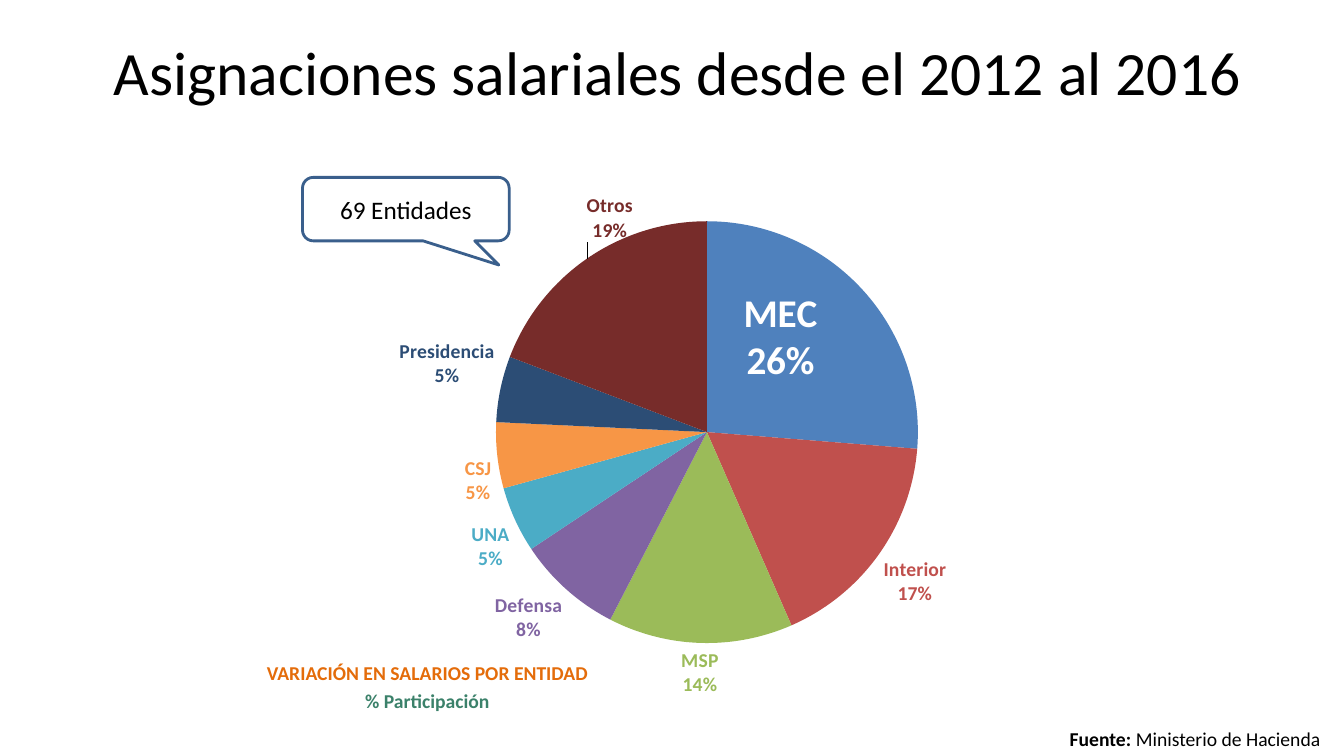
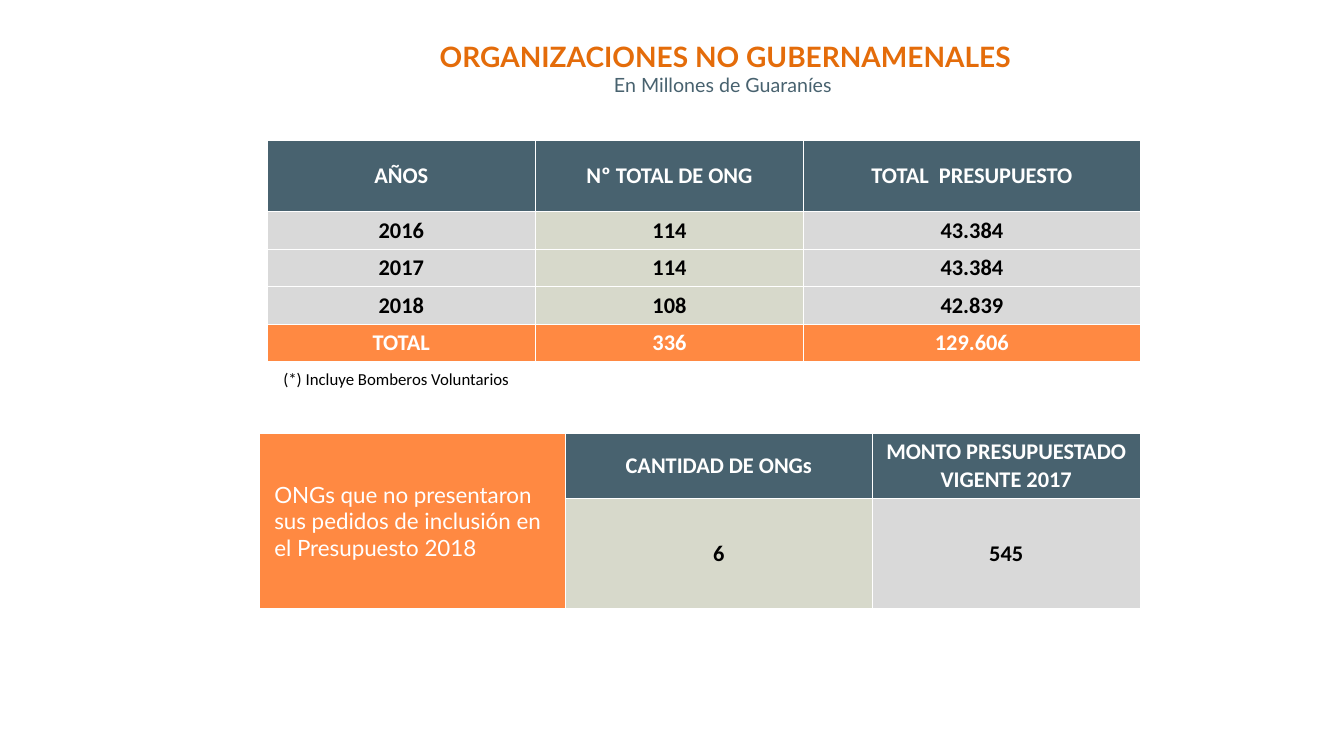
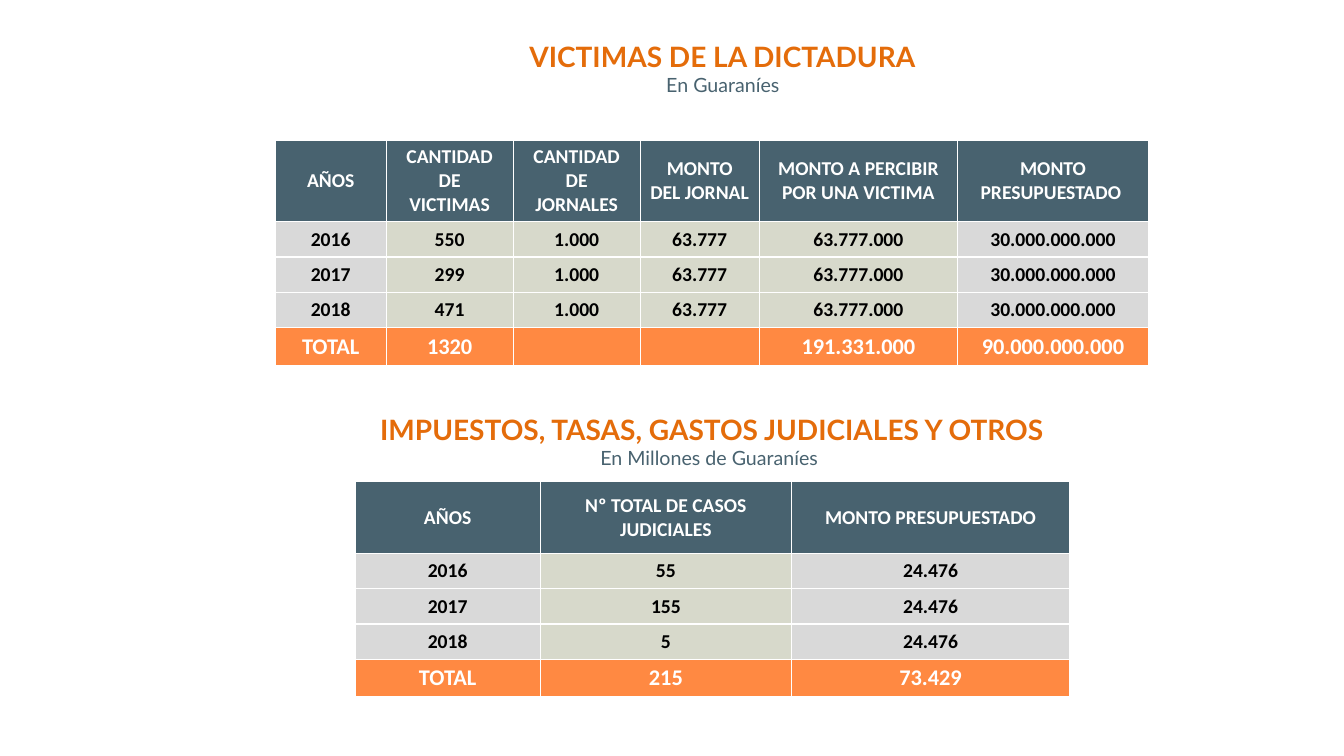
from lxml import etree
from pptx import Presentation
from pptx.chart.data import CategoryChartData
from pptx.dml.color import RGBColor
from pptx.enum.chart import XL_CHART_TYPE as ChartType, XL_LABEL_POSITION as LabelPosition
from pptx.enum.shapes import MSO_SHAPE as Shape
from pptx.enum.text import MSO_ANCHOR as Anchor, PP_ALIGN as Align
from pptx.oxml import parse_xml
from pptx.oxml.ns import nsdecls, qn
from pptx.util import Inches, Pt

# Shared look
ORANGE, SLATE, TOTAL_FILL = "E46C0A", "48626F", "FF8942"
GRAY, SAGE, WHITE, BLACK = "D9D9D9", "D7D9CB", "FFFFFF", "000000"
HEADING = dict(size=20, name="Lato", color=ORANGE, bold=True)
SUBHEADING = dict(size=14, name="Lato", color=SLATE, bold=False)
HEADING_BOX = (1.42, 0.36, 11.55, 0.63)

# Slide 1: category, share, slice colour
SHARES = [
    ("MEC", 0.26, "4F81BD"), ("Interior", 0.17, "C0504D"),
    ("MSP", 0.14, "9BBB59"), ("Defensa", 0.08, "8064A2"),
    ("UNA", 0.05, "4BACC6"), ("CSJ", 0.05, "F79646"),
    ("Presidencia", 0.05, "2C4D75"), ("Otros", 0.19, "772C2A"),
]
PIE_AREA = dict(x=0.27, y=0.13, w=0.516, h=0.75)
LABEL_SHIFTS = {"MEC": dict(x=-0.005, y=-0.04), "Otros": dict(x=0.06, y=-0.02)}

# Slides 2 and 3: tables
NGO_ROWS = [
    ("AÑOS", "Nº TOTAL DE ONG", "TOTAL  PRESUPUESTO"),
    ("2016", "114", "43.384"),
    ("2017", "114", "43.384"),
    ("2018", "108", "42.839"),
    ("TOTAL", "336", "129.606"),
    ("(*) Incluye Bomberos Voluntarios", "", ""),
]
MISSING_ROWS = [
    ("ONGs que no presentaron sus pedidos de inclusión en el Presupuesto 2018",
     "CANTIDAD DE ONGs", "MONTO PRESUPUESTADO VIGENTE 2017"),
    ("", "6", "545"),
]
VICTIM_ROWS = [
    ("AÑOS", "CANTIDAD DE VICTIMAS", "CANTIDAD DE JORNALES", "MONTO DEL JORNAL",
     "MONTO A PERCIBIR POR UNA VICTIMA", "MONTO PRESUPUESTADO "),
    ("2016", "550", "1.000", "63.777", "63.777.000", "30.000.000.000"),
    ("2017", "299", "1.000", "63.777", "63.777.000", "30.000.000.000"),
    ("2018", "471", "1.000", "63.777", "63.777.000", "30.000.000.000"),
    ("TOTAL", "1320", "", "", "191.331.000", "90.000.000.000"),
]
COURT_ROWS = [
    ("AÑOS", "Nº TOTAL DE CASOS JUDICIALES", "MONTO PRESUPUESTADO"),
    ("2016", "55", "24.476"),
    ("2017", "155", "24.476"),
    ("2018", "5", "24.476"),
    ("TOTAL", "215", "73.429"),
]


def rgb(color):
    return RGBColor.from_string(color)


def set_font(font, size=14, name="Calibri", color=BLACK, bold=False):
    for key, value in dict(size=Pt(size), name=name, bold=bold).items():
        setattr(font, key, value)
    font.color.rgb = rgb(color)


def add_run(paragraph, text, **look):
    run = paragraph.add_run()
    run.text = text
    set_font(run.font, **look)


def place(shape, box):
    for key, value in zip(("left", "top", "width", "height"), box):
        setattr(shape, key, Inches(value))


def add_text_box(slide, box, anchor=Anchor.MIDDLE):
    shape = slide.shapes.add_textbox(*map(Inches, box))
    shape.text_frame.word_wrap = True
    shape.text_frame.vertical_anchor = anchor
    return shape


def write_heading(shape, heading, subheading):
    shape.text_frame.vertical_anchor = Anchor.MIDDLE
    paragraph = shape.text_frame.paragraphs[0]
    paragraph.alignment = Align.CENTER
    add_run(paragraph, heading, **HEADING)
    paragraph.add_line_break()
    add_run(paragraph, subheading, **SUBHEADING)


def new_slide(presentation, box):
    slide = presentation.slides.add_slide(presentation.slide_layouts[5])
    place(slide.shapes.title, box)
    return slide


# Tables
def format_cell(cell, text, fill=None, align=Align.CENTER, margins=(0.1, 0.05), **look):
    properties = cell._tc.get_or_add_tcPr()
    for side in "LRTB":
        properties.append(parse_xml(
            f'<a:ln{side} {nsdecls("a")} w="{Pt(1)}"><a:solidFill>'
            f'<a:srgbClr val="{WHITE}"/></a:solidFill></a:ln{side}>'))
    if fill:
        cell.fill.solid()
        cell.fill.fore_color.rgb = rgb(fill)
    else:
        cell.fill.background()
    cell.vertical_anchor = Anchor.MIDDLE
    cell.margin_left = cell.margin_right = Inches(margins[0])
    cell.margin_top = cell.margin_bottom = Inches(margins[1])
    paragraph = cell.text_frame.paragraphs[0]
    paragraph.alignment = align
    if text:
        add_run(paragraph, text, **look)
    else:
        paragraph._p.get_or_add_endParaRPr().set("sz", str(look["size"] * 100))


def add_table(slide, left, top, widths, heights, rows, size, margin=0.1):
    frame = slide.shapes.add_table(
        len(rows), len(widths), Inches(left), Inches(top),
        Inches(sum(widths)), Inches(sum(heights)))
    table = frame.table
    table.first_row = table.horz_banding = False
    for column, width in zip(table.columns, widths):
        column.width = Inches(width)
    for row, height in zip(table.rows, heights):
        row.height = Inches(height)
    last = len(widths) - 1
    for r, texts in enumerate(rows):
        for c, text in enumerate(texts):
            look = dict(size=size, color=WHITE, bold=True, margins=(margin, 0.05))
            if r == 0:
                look.update(fill=SLATE)
            elif texts[0] == "TOTAL":
                look.update(fill=TOTAL_FILL, size=16)
            elif texts[0].startswith("(*)"):
                look.update(size=12, color=BLACK, bold=False, align=Align.LEFT)
            else:
                look.update(fill=GRAY if c in (0, last) else SAGE, color=BLACK)
            if rows is MISSING_ROWS and c == 0:
                look.update(fill=TOTAL_FILL, name="Lato", color=WHITE, bold=False,
                            align=Align.LEFT, margins=(0.15, 0.15))
            format_cell(table.cell(r, c), text, **look)
    return table


# Pie chart
def manual_layout(values, inner=False):
    target = '<c:layoutTarget val="inner"/>' if inner else ""
    modes = '<c:xMode val="edge"/><c:yMode val="edge"/>' if inner else ""
    sizes = "".join(f'<c:{key} val="{value}"/>' for key, value in values.items())
    return parse_xml(f'<c:layout {nsdecls("c")}><c:manualLayout>{target}{modes}{sizes}'
                     '</c:manualLayout></c:layout>')


def add_pie(slide, box):
    data = CategoryChartData(number_format="0%")
    data.categories = [name for name, _, _ in SHARES]
    data.add_series("Series 1", [share for _, share, _ in SHARES])
    chart = slide.shapes.add_chart(ChartType.PIE, *map(Inches, box), data).chart
    chart.has_legend = chart.has_title = False
    set_font(chart.font, size=10)
    plot = chart.plots[0]
    plot.vary_by_categories = True
    area = chart._chartSpace.chart.plotArea
    for layout in area.findall(qn("c:layout")):
        area.remove(layout)
    area.insert(0, manual_layout(PIE_AREA, inner=True))

    for index, (name, _, color) in enumerate(SHARES):
        point = plot.series[0].points[index]
        point.format.fill.solid()
        point.format.fill.fore_color.rgb = rgb(color)
        label, inside = point.data_label, name == "MEC"
        set_font(label.font, size=28 if inside else 14,
                 color=WHITE if inside else color, bold=True)
        label.position = LabelPosition.CENTER if inside else LabelPosition.OUTSIDE_END
        element = label._get_or_add_dLbl()
        element.find(qn("c:showCatName")).set("val", "1")
        etree.SubElement(element, qn("c:separator")).text = "\n"
        if name in LABEL_SHIFTS:
            element.insert(1, manual_layout(LABEL_SHIFTS[name]))


def build_salaries(presentation):
    slide = new_slide(presentation, (0.41, 0.15, 12.63, 1.19))
    title = slide.shapes.title.text_frame
    title.vertical_anchor = Anchor.MIDDLE
    title.paragraphs[0].alignment = Align.CENTER
    title.paragraphs[0].line_spacing = 0.9
    add_run(title.paragraphs[0], "Asignaciones salariales desde el 2012 al 2016", size=44)

    # Chart caption
    caption = add_text_box(slide, (2.52, 6.44, 3.44, 0.69)).text_frame
    first, second = caption.paragraphs[0], caption.add_paragraph()
    first.space_before = Pt(6)
    for paragraph, text, color in (
            (first, "VARIACIÓN EN SALARIOS POR ENTIDAD", ORANGE),
            (second, "% Participación", "3B816A")):
        paragraph.alignment = Align.CENTER
        paragraph.line_spacing = Pt(20)
        add_run(paragraph, text, color=color, bold=True)

    add_pie(slide, (2.73, 1.47, 8.11, 5.58))

    # Callout for the "Otros" slice
    callout = slide.shapes.add_shape(
        Shape.ROUNDED_RECTANGULAR_CALLOUT, *map(Inches, (3, 1.76, 2.05, 0.63)))
    for index, value in enumerate((0.45, 0.88, 0.17)):
        callout.adjustments[index] = value
    callout.shadow.inherit = False
    callout.fill.background()
    callout.line.color.rgb = rgb("3A5F8C")
    callout.line.width = Pt(2)
    callout.text_frame.vertical_anchor = Anchor.MIDDLE
    paragraph = callout.text_frame.paragraphs[0]
    paragraph.alignment = Align.CENTER
    add_run(paragraph, "69 Entidades", size=18)

    # Source line
    source = add_text_box(slide, (10.51, 7.16, 2.82, 0.34), Anchor.TOP)
    paragraph = source.text_frame.paragraphs[0]
    add_run(paragraph, "Fuente: ", bold=True)
    add_run(paragraph, "Ministerio de Hacienda")


def build_ngos(presentation):
    slide = new_slide(presentation, HEADING_BOX)
    write_heading(slide.shapes.title, "ORGANIZACIONES NO GUBERNAMENALES",
                  "En Millones de Guaraníes ")
    table = add_table(slide, 2.65, 1.39, (2.66, 2.66, 3.34), [0.71] + [0.35] * 5,
                      NGO_ROWS, 16, margin=0.16)
    table.cell(5, 0).merge(table.cell(5, 1))
    table = add_table(slide, 2.57, 4.3, (3.04, 3.04, 2.66), (0.64, 1.09),
                      MISSING_ROWS, 16)
    table.cell(0, 0).merge(table.cell(1, 0))


def build_victims(presentation):
    slide = new_slide(presentation, HEADING_BOX)
    write_heading(slide.shapes.title, "VICTIMAS DE LA DICTADURA ", "En Guaraníes ")
    heights = [0.71] + [0.35] * 4
    add_table(slide, 2.73, 1.39, (1.1, 1.26, 1.26, 1.18, 1.97, 1.89), heights,
              VICTIM_ROWS, 14)
    add_table(slide, 3.52, 4.78, (1.84, 2.49, 2.76), heights, COURT_ROWS, 14)
    write_heading(add_text_box(slide, (2.73, 4.06, 8.66, 0.63)),
                  "IMPUESTOS, TASAS, GASTOS JUDICIALES Y OTROS",
                  "En Millones de Guaraníes ")


def main():
    presentation = Presentation()
    presentation.slide_width = Inches(13.33)
    presentation.slide_height = Inches(7.5)
    for build in (build_salaries, build_ngos, build_victims):
        build(presentation)
    presentation.save("out.pptx")


if __name__ == "__main__":
    main()
